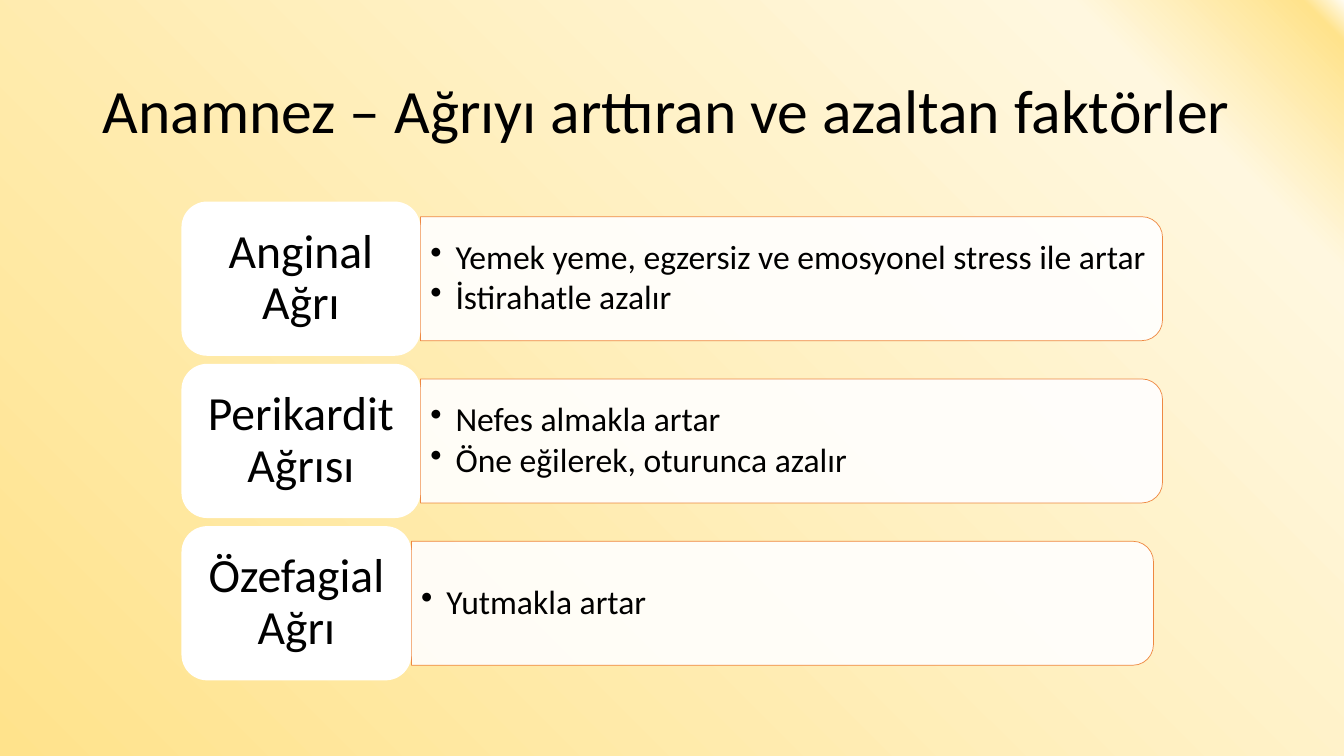
from dataclasses import dataclass

import pptx
import pptx.dml.color
import pptx.enum.shapes
import pptx.enum.text
import pptx.oxml
import pptx.oxml.ns
import pptx.shapes.autoshape
import pptx.slide
import pptx.text.text
import pptx.util
from lxml import etree

Inches = pptx.util.Inches
Pt = pptx.util.Pt
RGBColor = pptx.dml.color.RGBColor
qn = pptx.oxml.ns.qn
MSO_SHAPE = pptx.enum.shapes.MSO_SHAPE
PP_ALIGN = pptx.enum.text.PP_ALIGN
MIDDLE = pptx.enum.text.MSO_ANCHOR.MIDDLE

BLACK = RGBColor(0x00, 0x00, 0x00)
WHITE = RGBColor(0xFF, 0xFF, 0xFF)
ORANGE = RGBColor(0xED, 0x7D, 0x31)
GOLD = RGBColor(0xFF, 0xE3, 0x8C)
CREAM = RGBColor(0xFF, 0xF7, 0xDF)
IVORY = RGBColor(0xFF, 0xFC, 0xF2)
BACKGROUND_STOPS = [(0, IVORY), (2, GOLD), (13, CREAM), (100, GOLD)]

FONT = "Calibri"
ROW_LEFT, ROW_TOP, ROW_PITCH = 1.8, 2.0, 1.61
LABEL_H = 1.53
PANEL_W, PANEL_H = 7.36, 1.23
FACTORS_W, FACTORS_H = 7.3, 1.11


@dataclass
class PainType:
    label: str
    label_w: float
    factors: list[str]


PAIN_TYPES = [
    PainType("Anginal Ağrı", 2.37,
             ["Yemek yeme, egzersiz ve emosyonel stress ile artar",
              "İstirahatle azalır"]),
    PainType("Perikardit Ağrısı", 2.37,
             ["Nefes almakla artar", "Öne eğilerek, oturunca azalır"]),
    PainType("Özefagial Ağrı", 2.28, ["Yutmakla artar"]),
]


def set_background(s: pptx.slide.Slide) -> None:
    fill = s.background.fill
    fill.gradient()
    fill.gradient_angle = 225  # counter-clockwise: top right to bottom left
    stops = s.element.find(".//" + qn("a:gsLst"))
    for stop in list(stops):
        stops.remove(stop)
    for percent, color in BACKGROUND_STOPS:
        stop = etree.SubElement(stops, qn("a:gs"), pos=str(percent * 1000))
        etree.SubElement(stop, qn("a:srgbClr"), val=str(color))


def style_paragraph(p: pptx.text.text._Paragraph, text: str, size: int) -> None:
    p.text = text
    p.line_spacing = 0.9
    p.font.name = FONT
    p.font.size = Pt(size)
    p.font.color.rgb = BLACK


def add_bullet(p: pptx.text.text._Paragraph) -> None:
    pPr = p._p.get_or_add_pPr()
    pPr.set("marL", str(Inches(0.25)))
    pPr.set("indent", str(Inches(-0.25)))
    bullet = pptx.oxml.parse_xml(
        f'<a:buChar {pptx.oxml.ns.nsdecls("a")} char="•"/>')
    pPr.insert_element_before(bullet, "a:tabLst", "a:defRPr", "a:extLst")


def add_text_box(s: pptx.slide.Slide, left: float, top: float, width: float,
                 height: float) -> pptx.text.text.TextFrame:
    tf = s.shapes.add_textbox(Inches(left), Inches(top), Inches(width),
                              Inches(height)).text_frame
    tf.word_wrap = True
    tf.vertical_anchor = MIDDLE
    return tf


def add_white_shape(s: pptx.slide.Slide, kind: MSO_SHAPE, left: float,
                    top: float, width: float,
                    height: float) -> pptx.shapes.autoshape.Shape:
    sp = s.shapes.add_shape(kind, Inches(left), Inches(top), Inches(width),
                            Inches(height))
    sp.shadow.inherit = False
    sp.fill.solid()
    sp.fill.fore_color.rgb = WHITE
    return sp


def add_panel(s: pptx.slide.Slide, left: float, middle: float) -> None:
    # Quarter turn moves the rounded top corners to the right-hand side
    sp = add_white_shape(s, MSO_SHAPE.ROUND_2_SAME_RECTANGLE,
                         left + (PANEL_W - PANEL_H) / 2, middle - PANEL_W / 2,
                         PANEL_H, PANEL_W)
    sp.rotation = 90
    sp.line.color.rgb = ORANGE
    sp.line.width = Pt(0.5)
    for color in sp.element.spPr.iter(qn("a:srgbClr")):
        etree.SubElement(color, qn("a:alpha"), val="90000")


def add_factors(s: pptx.slide.Slide, left: float, middle: float,
                factors: list[str]) -> None:
    tf = add_text_box(s, left, middle - FACTORS_H / 2, FACTORS_W, FACTORS_H)
    tf.margin_right = Inches(0.05)
    for i, factor in enumerate(factors):
        p = tf.add_paragraph() if i else tf.paragraphs[0]
        style_paragraph(p, factor, 24)
        p.space_after = Pt(3)
        add_bullet(p)


def add_label(s: pptx.slide.Slide, top: float, pain: PainType) -> None:
    sp = add_white_shape(s, MSO_SHAPE.ROUNDED_RECTANGLE, ROW_LEFT, top,
                         pain.label_w, LABEL_H)
    sp.line.fill.background()
    tf = sp.text_frame
    tf.word_wrap = True
    tf.vertical_anchor = MIDDLE
    tf.margin_left = tf.margin_right = Inches(0.14)
    tf.margin_top = tf.margin_bottom = Inches(0.07)
    p = tf.paragraphs[0]
    style_paragraph(p, pain.label, 34)
    p.alignment = PP_ALIGN.CENTER


def main() -> None:
    prs = pptx.Presentation()
    prs.slide_width, prs.slide_height = Inches(13.33), Inches(7.5)
    s = prs.slides.add_slide(prs.slide_layouts[6])
    set_background(s)

    # Title
    tf = add_text_box(s, 0.92, 0.4, 11.5, 1.45)
    style_paragraph(tf.paragraphs[0],
                    "Anamnez – Ağrıyı arttıran ve azaltan faktörler", 44)

    # One row for each type of pain
    for i, pain in enumerate(PAIN_TYPES):
        top = ROW_TOP + i * ROW_PITCH
        middle = top + LABEL_H / 2
        panel_left = ROW_LEFT + pain.label_w
        add_panel(s, panel_left, middle)
        add_factors(s, panel_left, middle, pain.factors)
        add_label(s, top, pain)

    prs.save("out.pptx")


if __name__ == "__main__":
    main()
